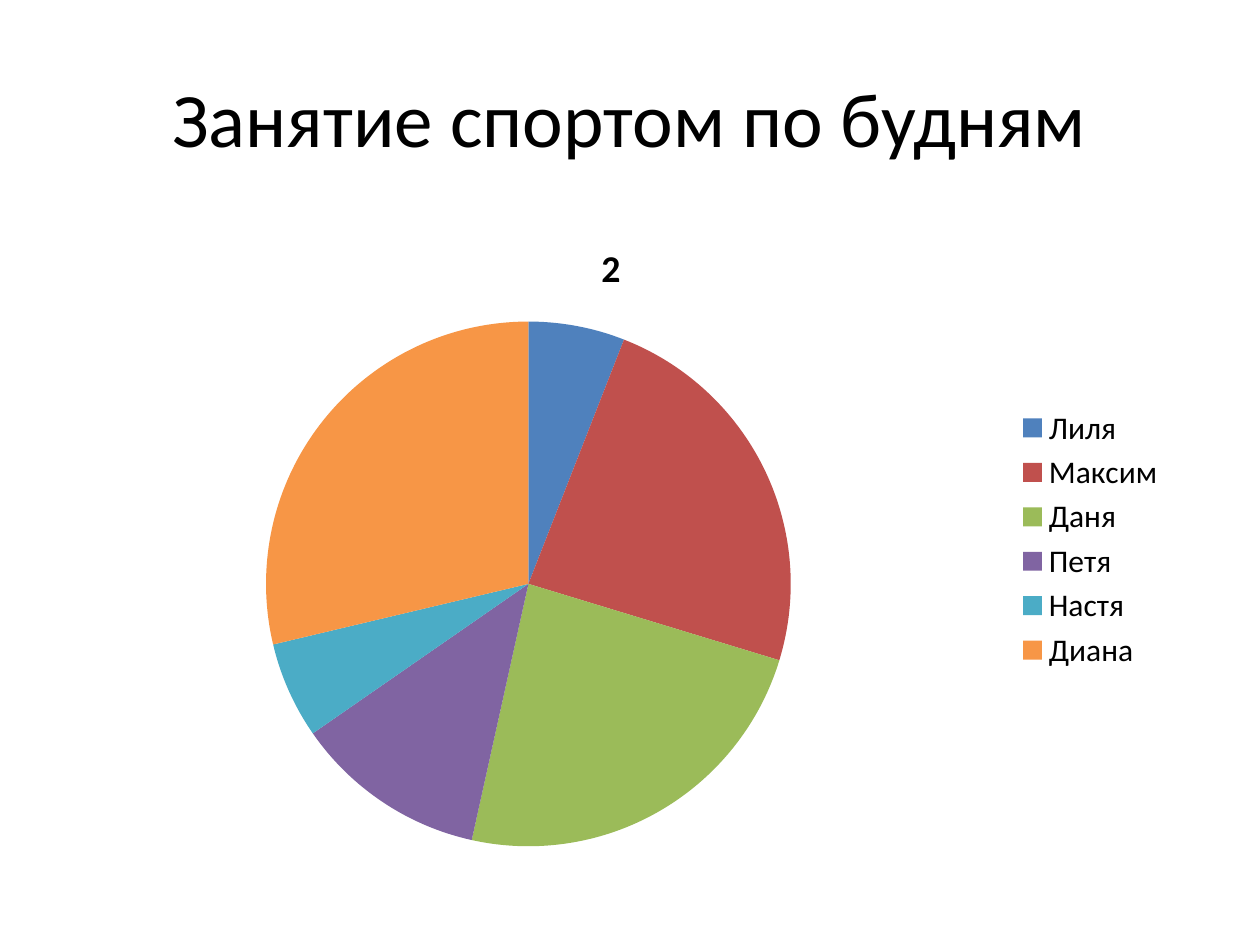
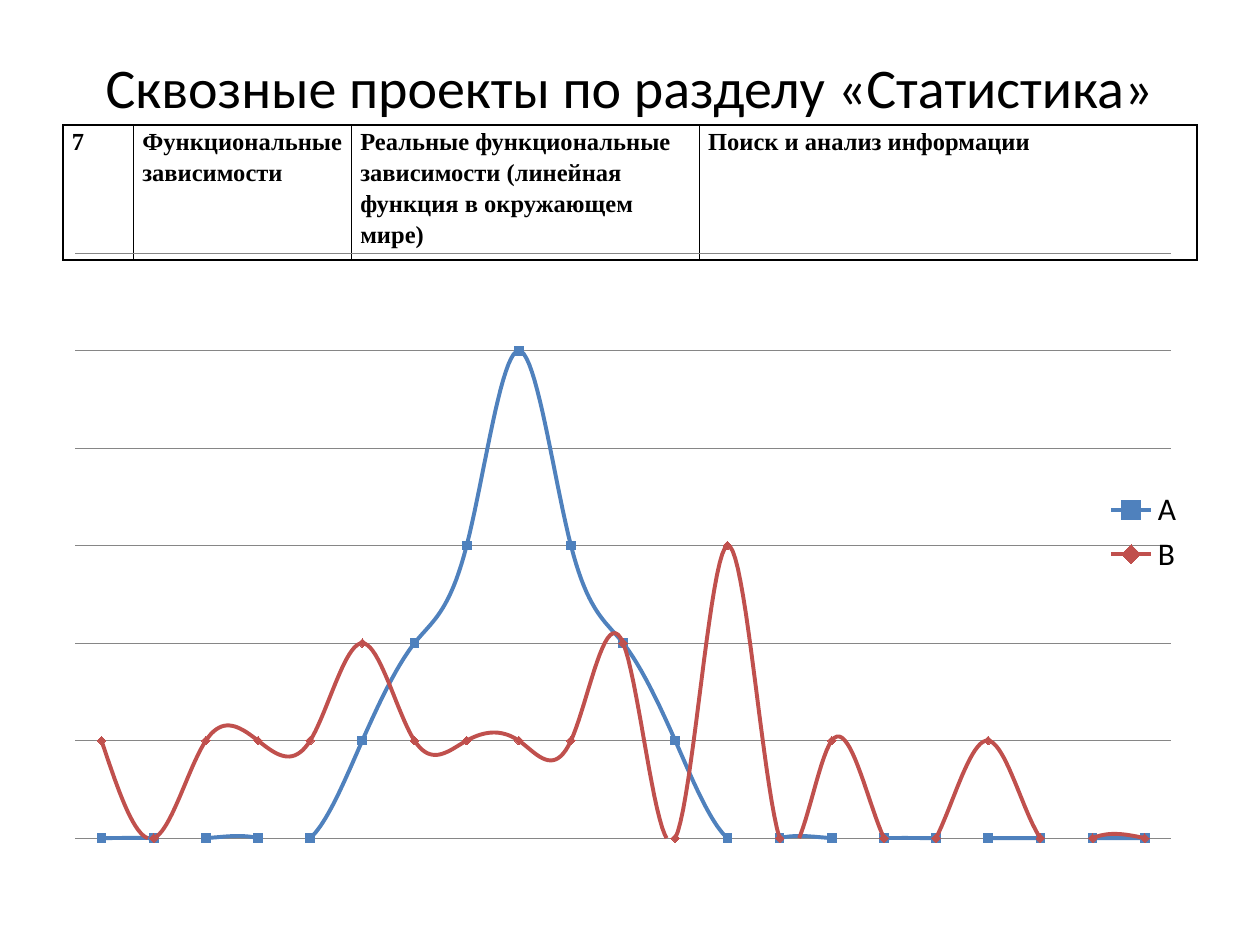
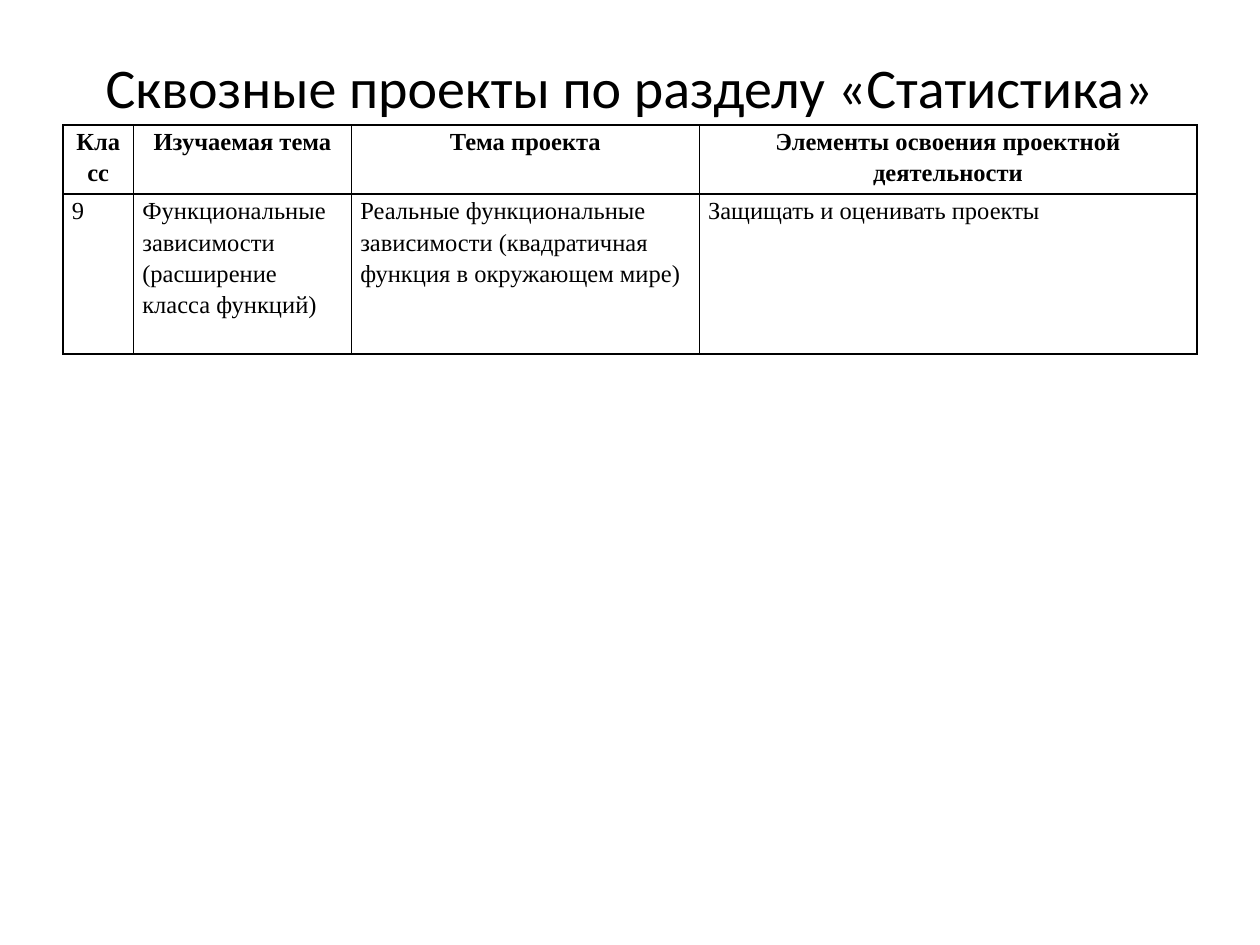
from typing import NamedTuple, Optional

from lxml import etree
from pptx import Presentation
from pptx import util as u
from pptx.chart.data import CategoryChartData
from pptx.dml.color import RGBColor
from pptx.enum import chart as ch
from pptx.enum import text
from pptx.oxml import ns

WIDTH, HEIGHT = u.Inches(10), u.Inches(7.5)
MARGIN = 0.05  # share of the slide's width
BLACK, GRID = "000000", "868686"
PALETTE = ["4F81BD", "C0504D", "9BBB59", "8064A2", "4BACC6", "F79646"]
FONT, TABLE_FONT = "Calibri", "Times New Roman"
TABLE_COLUMNS = [0.56, 1.73, 2.76, 3.95]
PROJECTS_TITLE = "Сквозные проекты по разделу «Статистика»"


class Box(NamedTuple):
    """Left, top, width and height as shares of the slide's size."""
    left: float
    top: float
    width: float
    height: float

    def emu(self) -> list[int]:
        return [round(share * full) for share, full in zip(self, (WIDTH, HEIGHT) * 2)]


class Row(NamedTuple):
    height: float
    cells: list[str]
    bold: bool = False
    centred: bool = False


class Curve(NamedTuple):
    name: str
    values: list[Optional[int]]
    marker: ch.XL_MARKER_STYLE


def rgb(color: str) -> RGBColor:
    return RGBColor.from_string(color)


def set_font(font, size: float, name: str = FONT, bold: bool = False) -> None:
    font.size, font.name, font.bold = u.Pt(size), name, bold
    font.color.rgb = rgb(BLACK)


def add_title(slide, title: str, size: float, height: float) -> None:
    tf = slide.shapes.add_textbox(*Box(MARGIN, 0.04, 1 - 2 * MARGIN, height).emu()).text_frame
    tf.word_wrap = True
    tf.vertical_anchor = text.MSO_ANCHOR.MIDDLE
    p = tf.paragraphs[0]
    p.alignment = text.PP_ALIGN.CENTER
    r = p.add_run()
    r.text = title
    set_font(r.font, size)


def add_borders(cell) -> None:
    props = cell._tc.get_or_add_tcPr()
    for i, side in enumerate("LRTB"):
        line = etree.Element(ns.qn(f"a:ln{side}"), w=str(u.Pt(1)))
        fill = etree.SubElement(line, ns.qn("a:solidFill"))
        etree.SubElement(fill, ns.qn("a:srgbClr"), val=BLACK)
        props.insert(i, line)


def add_table(slide, rows: list[Row]) -> None:
    height = sum(row.height for row in rows) / HEIGHT.inches
    box = Box(MARGIN, 0.132, 1 - 2 * MARGIN, height)
    table = slide.shapes.add_table(len(rows), len(TABLE_COLUMNS), *box.emu()).table
    table.first_row = table.horz_banding = False
    for column, width in zip(table.columns, TABLE_COLUMNS):
        column.width = u.Inches(width)
    for i, row in enumerate(rows):
        table.rows[i].height = u.Inches(row.height)
        for j, words in enumerate(row.cells):
            cell = table.cell(i, j)
            cell.fill.background()
            cell.margin_left = cell.margin_right = u.Inches(0.07)
            cell.margin_top = cell.margin_bottom = 0
            p = cell.text_frame.paragraphs[0]
            p.line_spacing = 1.15
            p.alignment = text.PP_ALIGN.CENTER if row.centred else text.PP_ALIGN.LEFT
            r = p.add_run()
            r.text = words
            set_font(r.font, 14, TABLE_FONT, row.bold)
            add_borders(cell)


def add_chart(slide, kind: ch.XL_CHART_TYPE, box: Box, categories: list[str],
              series: dict[str, list], legend_overlay: bool = False):
    data = CategoryChartData()
    data.categories = categories
    for name, values in series.items():
        data.add_series(name, values)
    chart = slide.shapes.add_chart(kind, *box.emu(), data).chart
    set_font(chart.font, 18)
    chart.has_legend = True
    chart.legend.position = ch.XL_LEGEND_POSITION.RIGHT
    chart.legend.include_in_layout = legend_overlay
    return chart


def add_pie(slide, title: str, shares: dict[str, int]) -> None:
    chart = add_chart(slide, ch.XL_CHART_TYPE.PIE, Box(0.035, 0.227, 0.9, 0.687),
                      list(shares), {title: list(shares.values())})
    chart.has_title = True
    r = chart.chart_title.text_frame.paragraphs[0].add_run()
    r.text = title
    set_font(r.font, 21.6, bold=True)
    plot = chart.plots[0]
    plot.vary_by_categories = True
    for i, color in enumerate(PALETTE):
        fill = plot.series[0].points[i].format.fill
        fill.solid()
        fill.fore_color.rgb = rgb(color)


def place_plot(chart, box: Box) -> None:
    """Fix the inner plot area, in shares of the chart's size."""
    area = chart._chartSpace.chart.plotArea
    for old in area.findall(ns.qn("c:layout")):
        area.remove(old)
    layout = etree.Element(ns.qn("c:layout"))
    area.insert(0, layout)
    manual = etree.SubElement(layout, ns.qn("c:manualLayout"))
    settings = {"layoutTarget": "inner", "xMode": "edge", "yMode": "edge",
                "x": box.left, "y": box.top, "w": box.width, "h": box.height}
    for tag, value in settings.items():
        etree.SubElement(manual, ns.qn(f"c:{tag}"), val=str(value))


def add_curves(slide, curves: list[Curve]) -> None:
    categories = [str(n + 1) for n in range(len(curves[0].values))]
    chart = add_chart(slide, ch.XL_CHART_TYPE.LINE_MARKERS,
                      Box(MARGIN, 0.233, 1 - 2 * MARGIN, 0.66), categories,
                      {c.name: c.values for c in curves}, legend_overlay=True)
    chart.has_title = False
    chart.plots[0].vary_by_categories = False
    place_plot(chart, Box(0.011, 0.053, 0.966, 0.938))
    chart._chartSpace.chart.find(ns.qn("c:dispBlanksAs")).set("val", "zero")
    axis = chart.value_axis
    axis.minimum_scale, axis.maximum_scale, axis.major_unit = 0, 120, 20
    axis.has_major_gridlines = True
    axis.major_gridlines.format.line.color.rgb = rgb(GRID)
    axis.major_gridlines.format.line.width = u.Pt(0.75)
    axis.visible = chart.category_axis.visible = False
    for curve, series, color in zip(curves, chart.plots[0].series, PALETTE):
        series.smooth = True
        series.format.line.color.rgb = rgb(color)
        series.format.line.width = u.Pt(2.25)
        marker = series.marker
        marker.style, marker.size = curve.marker, 5
        marker.format.fill.solid()
        marker.format.fill.fore_color.rgb = rgb(color)
        marker.format.line.color.rgb = rgb(color)


def main() -> None:
    prs = Presentation()
    prs.slide_width, prs.slide_height = WIDTH, HEIGHT
    sports, functions, projects = (prs.slides.add_slide(prs.slide_layouts[6]) for _ in range(3))

    add_title(sports, "Занятие спортом по будням", 44, 0.167)
    add_pie(sports, "2", {"Лиля": 6, "Максим": 24, "Даня": 24,
                          "Петя": 12, "Настя": 6, "Диана": 29})

    for slide in (functions, projects):
        add_title(slide, PROJECTS_TITLE, 32, 0.103)

    add_table(functions, [
        Row(0.95, ["7", "Функциональные зависимости",
                   "Реальные функциональные зависимости (линейная функция в окружающем мире)",
                   "Поиск и анализ информации"], bold=True)])
    blanks = [None] * 3
    add_curves(functions, [
        Curve("А", [0] * 5 + [20, 40, 60, 100, 60, 40, 20] + [0] * 6 + blanks,
              ch.XL_MARKER_STYLE.SQUARE),
        Curve("В", [20, 0, 20, 20, 20, 40, 20, 20, 20, 20, 40, 0, 60, 0, 20, 0, 0, 20] + blanks,
              ch.XL_MARKER_STYLE.DIAMOND)])

    add_table(projects, [
        Row(0.55, ["Класс", "Изучаемая тема", "Тема проекта",
                   "Элементы освоения проектной деятельности"], bold=True, centred=True),
        Row(1.27, ["9", "Функциональные зависимости (расширение класса функций)",
                   "Реальные функциональные зависимости (квадратичная функция в окружающем мире)",
                   "Защищать и оценивать проекты"])])

    prs.save("out.pptx")


if __name__ == "__main__":
    main()
